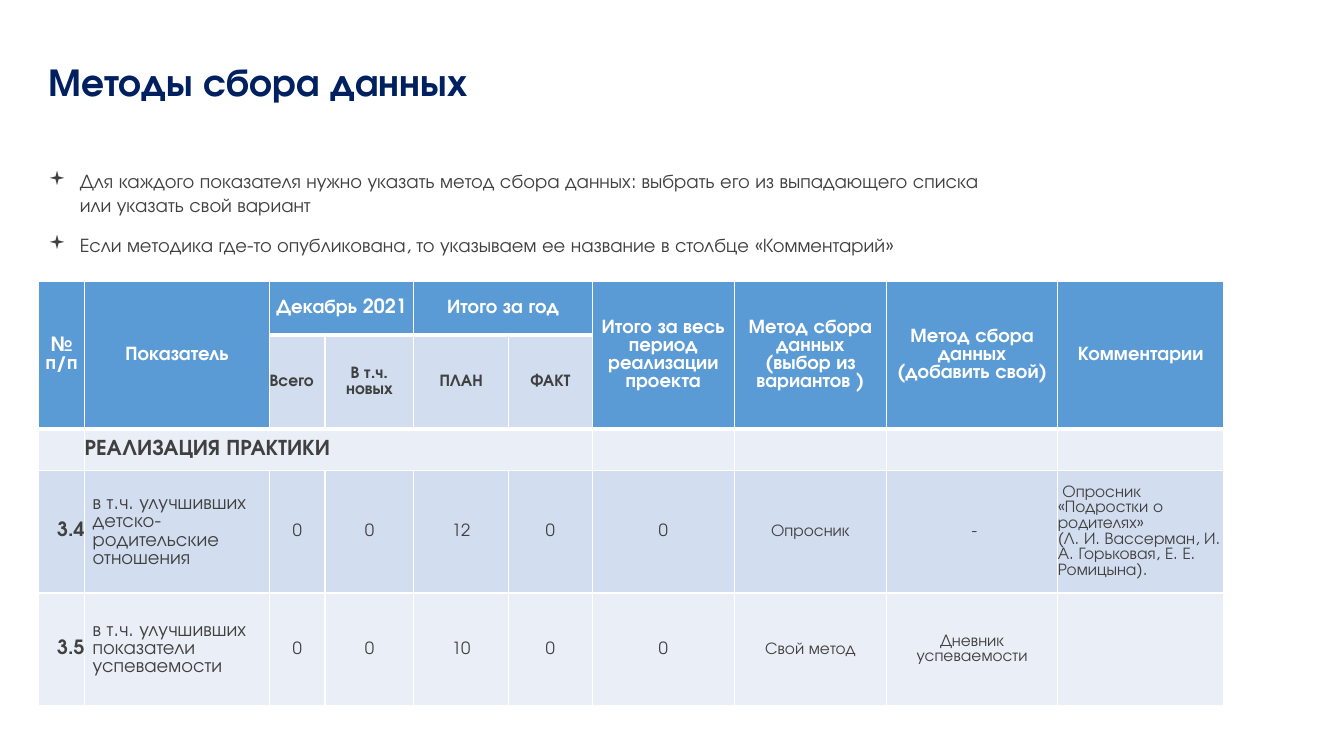
import dataclasses
import typing

import pptx
import pptx.dml.color
import pptx.enum.text
import pptx.oxml
import pptx.oxml.ns
import pptx.util

Pt = pptx.util.Pt
Align = pptx.enum.text.PP_ALIGN
Anchor = pptx.enum.text.MSO_ANCHOR


@dataclasses.dataclass(frozen=True)
class Theme:
    font: str = "TeX Gyre Adventor"
    bullet_font: str = "Wingdings"
    navy: str = "002060"
    gray: str = "404040"
    white: str = "FFFFFF"
    blue: str = "5B9BD5"
    band: str = "D2DEEF"
    pale: str = "EAEFF7"
    title_size: int = 28
    section_size: int = 16
    text_size: int = 14
    small_size: int = 12


THEME = Theme()


@dataclasses.dataclass(frozen=True)
class Look:
    size: int = THEME.small_size
    bold: bool = False
    color: str = THEME.gray
    align: Align = Align.CENTER
    indent: float = 0


@dataclasses.dataclass(frozen=True)
class Entry:
    row: int
    column: int
    text: str
    look: Look
    fill: str
    row_span: int = 1
    column_span: int = 1


HEADER = Look(THEME.text_size, True, THEME.white)
SUBHEADER = Look(bold=True)
SUBHEADER_LEFT = Look(bold=True, align=Align.LEFT)
SECTION = Look(THEME.section_size, True, align=Align.LEFT)
NUMBER = Look(THEME.text_size, True, align=Align.RIGHT)
INDICATOR = Look(THEME.text_size, align=Align.LEFT, indent=5.76)
VALUE = Look()
COMMENT = Look(align=Align.LEFT)
ROW_LOOKS = [NUMBER, INDICATOR] + [VALUE] * 7 + [COMMENT]

TITLE = "Методы сбора данных"
BULLETS = [
    "Для каждого показателя нужно указать метод сбора данных: "
    "выбрать его из выпадающего списка или указать свой вариант",
    "Если методика где-то опубликована, то указываем ее название в столбце «Комментарий»",
]
COLUMN_WIDTHS = [33.1, 132.1, 39.6, 63.4, 67.7, 59.8, 101.5, 108.7, 122.4, 118.4]
ROW_HEIGHTS = [38.2, 49.2, 29.5, 87.8, 80.6]
TALL_HEADERS = {
    0: "№ п/п",
    1: "Показатель",
    6: "Итого за весь период реализации проекта",
    7: "Метод сбора данных\n(выбор из вариантов )",
    8: "Метод сбора данных\n(добавить свой)",
    9: "Комментарии",
}
WIDE_HEADERS = {2: "Декабрь 2021", 4: "Итого за год"}
SUBHEADERS = ["Всего", "В т.ч. новых", "ПЛАН", "ФАКТ"]
DATA_ROWS = [
    ["3.4", "в т.ч. улучшивших детско-родительские отношения",
     "0", "0", "12", "0", "0", "Опросник", " -",
     " Опросник «Подростки о родителях»\n"
     "(Л. И. Вассерман, И. А. Горьковая, Е. Е. Ромицына)."],
    ["3.5", "в т.ч. улучшивших показатели успеваемости",
     "0", "0", "10", "0", "0", "Свой метод", "Дневник успеваемости", ""],
]


def table_entries() -> list[Entry]:
    entries = [Entry(0, column, text, HEADER, THEME.blue, row_span=2)
               for column, text in TALL_HEADERS.items()]
    entries += [Entry(0, column, text, HEADER, THEME.blue, column_span=2)
                for column, text in WIDE_HEADERS.items()]
    entries += [Entry(1, column, text, SUBHEADER_LEFT if column == 2 else SUBHEADER, THEME.band)
                for column, text in enumerate(SUBHEADERS, start=2)]
    entries.append(Entry(2, 1, "РЕАЛИЗАЦИЯ ПРАКТИКИ", SECTION, THEME.pale, column_span=5))
    entries += [Entry(2, column, "", VALUE, THEME.pale) for column in (0, 6, 7, 8, 9)]
    for row, (texts, fill) in enumerate(zip(DATA_ROWS, (THEME.band, THEME.pale)), start=3):
        entries += [Entry(row, column, text, look, fill)
                    for column, (text, look) in enumerate(zip(texts, ROW_LOOKS))]
    return entries


def style_runs(para: typing.Any, size: int, color: str, bold: bool = False) -> None:
    for span in para.runs:
        span.font.name = THEME.font
        span.font.size = Pt(size)
        span.font.bold = bold
        span.font.color.rgb = pptx.dml.color.RGBColor.from_string(color)


def set_indent(para: typing.Any, left: float, first_line: float = 0) -> None:
    properties = para._p.get_or_add_pPr()
    properties.set("marL", str(Pt(left)))
    properties.set("indent", str(Pt(first_line)))


def paint_cell(cell: typing.Any, fill: str) -> None:
    """Give a cell white borders, thicker below headers, and a solid fill."""
    properties = cell._tc.get_or_add_tcPr()
    bottom = 3 if fill == THEME.blue else 1
    for side, width in (("L", 1), ("R", 1), ("T", 1), ("B", bottom)):
        properties.append(pptx.oxml.parse_xml(
            f'<a:ln{side} {pptx.oxml.ns.nsdecls("a")} w="{Pt(width)}"><a:solidFill>'
            f'<a:srgbClr val="{THEME.white}"/></a:solidFill></a:ln{side}>'))
    cell.fill.solid()
    cell.fill.fore_color.rgb = pptx.dml.color.RGBColor.from_string(fill)


def draw_entry(table: typing.Any, entry: Entry) -> None:
    last_row = entry.row + entry.row_span - 1
    last_column = entry.column + entry.column_span - 1
    for row in range(entry.row, last_row + 1):
        for column in range(entry.column, last_column + 1):
            paint_cell(table.cell(row, column), entry.fill)
    cell = table.cell(entry.row, entry.column)
    if entry.row_span > 1 or entry.column_span > 1:
        cell.merge(table.cell(last_row, last_column))
    cell.margin_left = cell.margin_right = cell.margin_top = cell.margin_bottom = 0
    cell.vertical_anchor = Anchor.MIDDLE
    cell.text_frame.text = entry.text
    look = entry.look
    for para in cell.text_frame.paragraphs:
        para.alignment = look.align
        set_indent(para, look.indent)
        style_runs(para, look.size, look.color, look.bold)


def draw_table(page: typing.Any) -> None:
    frame = page.shapes.add_table(
        len(ROW_HEIGHTS), len(COLUMN_WIDTHS), Pt(27.4), Pt(200.9),
        Pt(sum(COLUMN_WIDTHS)), Pt(sum(ROW_HEIGHTS)))
    table = frame.table
    table.first_row = table.horz_banding = False
    for column, width in zip(table.columns, COLUMN_WIDTHS):
        column.width = Pt(width)
    for row, height in zip(table.rows, ROW_HEIGHTS):
        row.height = Pt(height)
    for entry in table_entries():
        draw_entry(table, entry)


def draw_title(page: typing.Any) -> None:
    box = page.shapes.add_textbox(Pt(27.4), Pt(33.1), Pt(488), Pt(54))
    box.text_frame.word_wrap = True
    box.text_frame.vertical_anchor = Anchor.MIDDLE
    box.text_frame.text = TITLE
    para = box.text_frame.paragraphs[0]
    para.line_spacing = 0.9
    style_runs(para, THEME.title_size, THEME.navy, bold=True)


def draw_bullets(page: typing.Any) -> None:
    box = page.shapes.add_textbox(Pt(27.4), Pt(117.4), Pt(682), Pt(83.5))
    box.text_frame.word_wrap = True
    box.text_frame.text = "\n".join(BULLETS)
    namespace = pptx.oxml.ns.nsdecls("a")
    for para in box.text_frame.paragraphs:
        set_indent(para, 22.5, -22.5)
        properties = para._p.get_or_add_pPr()
        properties.append(pptx.oxml.parse_xml(
            f'<a:buFont {namespace} typeface="{THEME.bullet_font}" charset="2"/>'))
        properties.append(pptx.oxml.parse_xml(f'<a:buChar {namespace} char="▪"/>'))
        para.space_after = Pt(12)
        style_runs(para, THEME.text_size, THEME.gray)


def main() -> None:
    deck = pptx.Presentation()
    deck.slide_width, deck.slide_height = Pt(960), Pt(540)
    page = deck.slides.add_slide(deck.slide_layouts[6])
    draw_title(page)
    draw_table(page)
    draw_bullets(page)
    deck.save("out.pptx")


if __name__ == "__main__":
    main()
